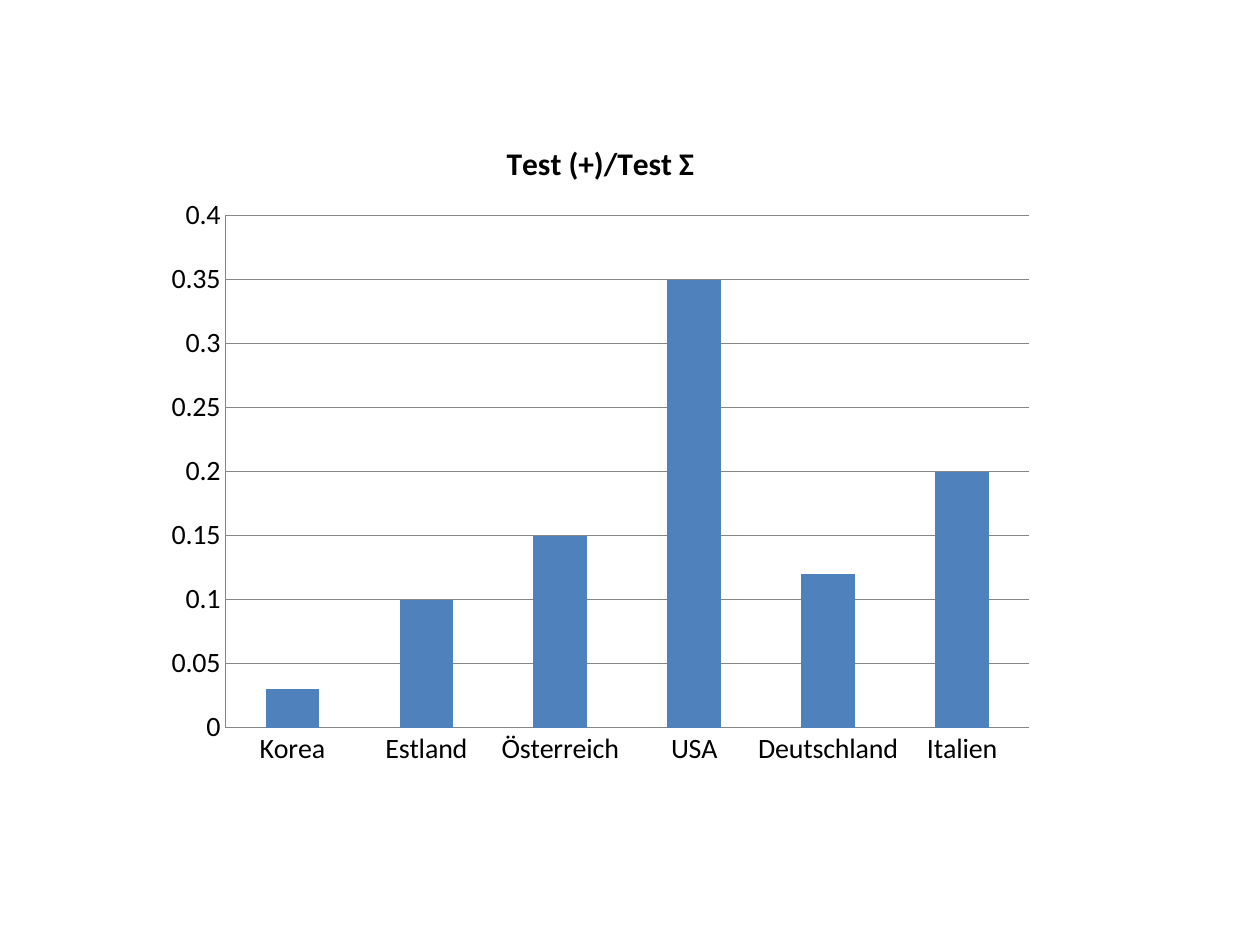
import dataclasses

import lxml.etree
import pptx
import pptx.chart.data
import pptx.dml.color
import pptx.enum.chart
import pptx.util

PX = 914400 / 126  # EMU in one pixel
FONT = "Calibri"
BLACK, BLUE, GREY = "000000", "4F81BD", "868686"


@dataclasses.dataclass
class Rate:
    country: str
    value: float


RATES = [
    Rate("Korea", 0.03),
    Rate("Estland", 0.1),
    Rate("Österreich", 0.15),
    Rate("USA", 0.35),
    Rate("Deutschland", 0.12),
    Rate("Italien", 0.2),
]


def px(length: int) -> pptx.util.Emu:
    return pptx.util.Emu(round(length * PX))


def colour(value: str) -> pptx.dml.color.RGBColor:
    return pptx.dml.color.RGBColor.from_string(value)


def style_font(font, size: int, bold: bool = False) -> None:
    font.name = FONT
    font.size = pptx.util.Pt(size)
    font.bold = bold
    font.color.rgb = colour(BLACK)


def style_line(line) -> None:
    line.color.rgb = colour(GREY)
    line.width = pptx.util.Pt(0.75)


def style_axis(axis) -> None:
    axis.major_tick_mark = pptx.enum.chart.XL_TICK_MARK.NONE
    axis.minor_tick_mark = pptx.enum.chart.XL_TICK_MARK.NONE
    style_font(axis.tick_labels.font, 16)
    style_line(axis.format.line)


def place_plot_area(chart, left: float, top: float, width: float, height: float) -> None:
    """Fix the inner plot area, in fractions of the chart."""
    plot_area = chart.plots[0]._element.getparent()
    namespace = lxml.etree.QName(plot_area).namespace
    for old in plot_area.findall(f"{{{namespace}}}layout"):
        plot_area.remove(old)
    layout = lxml.etree.Element(f"{{{namespace}}}layout")
    manual = lxml.etree.SubElement(layout, f"{{{namespace}}}manualLayout")
    settings = {"layoutTarget": "inner", "xMode": "edge", "yMode": "edge",
                "x": left, "y": top, "w": width, "h": height}
    for name, value in settings.items():
        lxml.etree.SubElement(manual, f"{{{namespace}}}{name}", val=str(value))
    plot_area.insert(0, layout)


def add_rate_chart(page, rates: list[Rate]) -> None:
    data = pptx.chart.data.CategoryChartData()
    data.categories = [rate.country for rate in rates]
    data.add_series("Test (+)/Test Σ", [rate.value for rate in rates])
    chart = page.shapes.add_chart(
        pptx.enum.chart.XL_CHART_TYPE.COLUMN_CLUSTERED,
        px(154), px(116), px(893), px(665), data,
    ).chart
    chart.has_legend = False
    style_font(chart.font, 10)

    # Title
    chart.has_title = True
    para = chart.chart_title.text_frame.paragraphs[0]
    para.text = "Test (+)/Test Σ"
    style_font(para.runs[0].font, 18, bold=True)
    chart.chart_title.include_in_layout = False

    # Axes and gridlines
    style_axis(chart.category_axis)
    scale = chart.value_axis
    style_axis(scale)
    scale.minimum_scale, scale.maximum_scale, scale.major_unit = 0, 0.4, 0.05
    scale.tick_labels.number_format = "General"
    scale.tick_labels.number_format_is_linked = False
    scale.has_major_gridlines = True
    style_line(scale.major_gridlines.format.line)

    # Columns
    plot = chart.plots[0]
    plot.gap_width = 150
    plot.vary_by_categories = False
    fill = plot.series[0].format.fill
    fill.solid()
    fill.fore_color.rgb = colour(BLUE)
    place_plot_area(chart, 0.08, 0.15, 0.9, 0.77)


def main() -> None:
    deck = pptx.Presentation()
    deck.slide_width, deck.slide_height = px(1260), px(945)
    page = deck.slides.add_slide(deck.slide_layouts[6])
    add_rate_chart(page, RATES)
    deck.save("out.pptx")


if __name__ == "__main__":
    main()
